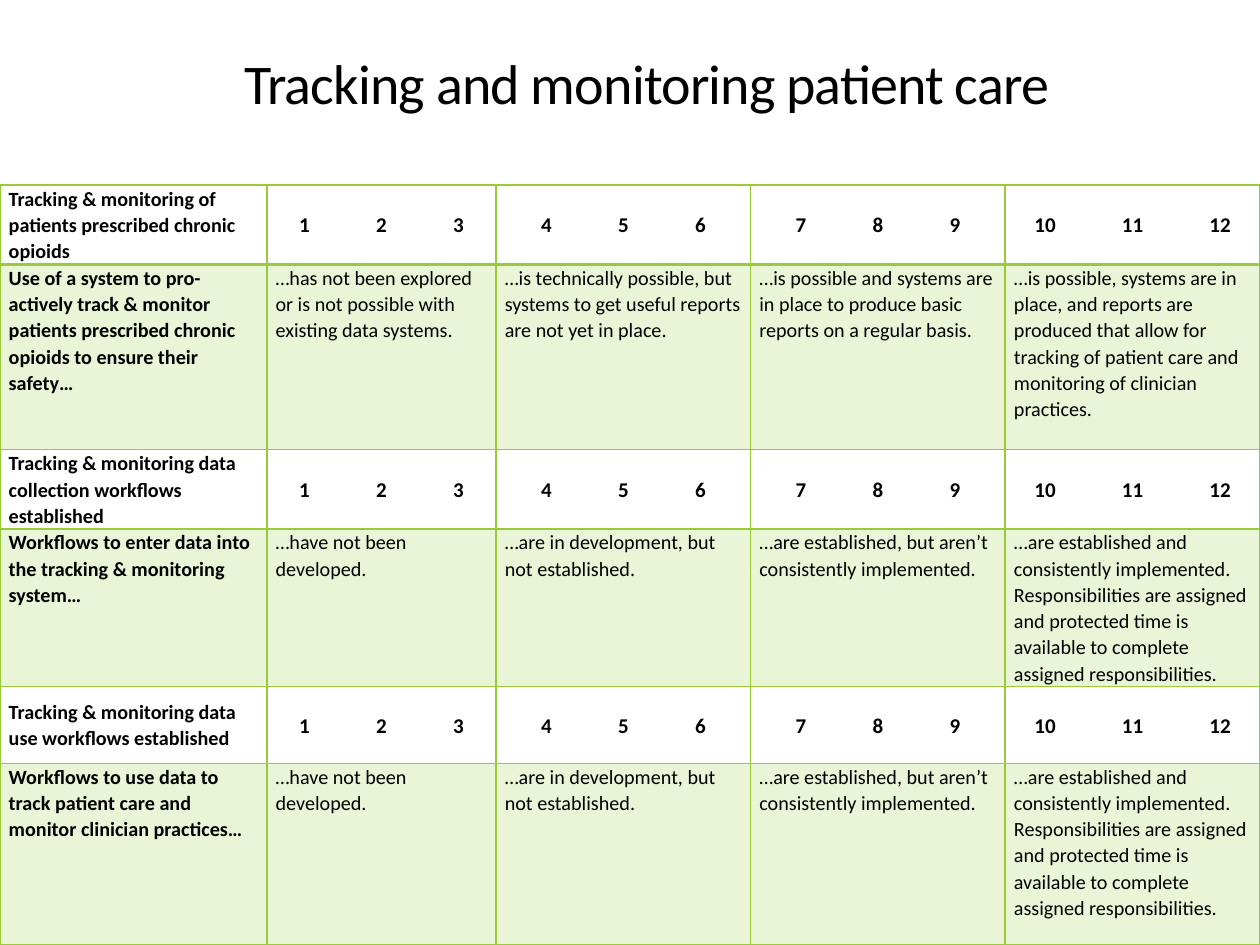
"""Build a slide with a scoring table for tracking and monitoring patient care."""
from lxml.etree import SubElement
from pptx import Presentation
from pptx.dml.color import RGBColor
from pptx.enum.text import MSO_ANCHOR as Anchor, PP_ALIGN as Align
from pptx.oxml.ns import qn
from pptx.util import Pt

BLACK = RGBColor(0x00, 0x00, 0x00)
GREEN = RGBColor(0x99, 0xCB, 0x38)
FONT = "Calibri"

TITLE = "Tracking and monitoring patient care"
WORKFLOW_LEVELS = [
    "…have not been developed.",
    "…are in development, but not established.",
    "…are established, but aren’t consistently implemented.",
    "…are established and consistently implemented. Responsibilities are assigned "
    "and protected time is available to complete assigned responsibilities.",
]
TOPICS = [
    ("Tracking & monitoring of patients prescribed chronic opioids",
     "Use of a system to pro-actively track & monitor patients prescribed chronic "
     "opioids to ensure their safety…",
     ["…has not been explored or is not possible with existing data systems.",
      "…is technically possible, but systems to get useful reports are not yet in place.",
      "…is possible and systems are in place to produce basic reports on a regular basis.",
      "…is possible, systems are in place, and reports are produced that allow for "
      "tracking of patient care and monitoring of clinician practices."]),
    ("Tracking & monitoring data collection workflows established",
     "Workflows to enter data into the tracking & monitoring system…",
     WORKFLOW_LEVELS),
    ("Tracking & monitoring data use workflows established",
     "Workflows to use data to track patient care and monitor clinician practices…",
     WORKFLOW_LEVELS),
]
SCORES = [(1, 2, 3), (4, 5, 6), (7, 8, 9), (10, 11, 12)]
SCORE_GAPS = [44, 44, 44, 50]
COLUMN_WIDTHS = [152.5, 131, 145.5, 145.5, 145.5]
ROW_HEIGHTS = [45.4, 105.8, 45.4, 90, 43.9, 103.7]
TABLE_TOP = 105.8
INSET = 5


def format_font(span, **values):
    span.font.color.rgb = BLACK
    for name, value in {"name": FONT, **values}.items():
        setattr(span.font, name, value)


def add_borders(cell, widths):
    properties = cell._tc.get_or_add_tcPr()
    for side, width in widths.items():
        line = SubElement(properties, qn(f"a:ln{side}"), w=str(Pt(width)))
        fill = SubElement(line, qn("a:solidFill"))
        SubElement(fill, qn("a:srgbClr"), val=str(GREEN))


def add_score_tabs(para, column):
    center = COLUMN_WIDTHS[column] / 2 - INSET
    gap = SCORE_GAPS[column - 1]
    tabs = SubElement(para._p.get_or_add_pPr(), qn("a:tabLst"))
    for position in (center - gap, center, center + gap):
        SubElement(tabs, qn("a:tab"), pos=str(Pt(position)), algn="ctr")


def fill_cell(cell, row, column, text):
    is_header = row % 2 == 0
    is_score = is_header and column > 0
    add_borders(cell, {"L": 1, "R": 1, "T": 2 if row == 1 else 1, "B": 2 if row == 0 else 1})
    if is_header:
        cell.fill.background()
    else:
        cell.fill.solid()
        cell.fill.fore_color.rgb = GREEN
        color = cell._tc.tcPr.find(f"{qn('a:solidFill')}/{qn('a:srgbClr')}")
        SubElement(color, qn("a:alpha"), val="20000")
    layout = {"margin_left": Pt(INSET), "margin_right": Pt(INSET), "margin_top": 0,
              "margin_bottom": 0,
              "vertical_anchor": Anchor.MIDDLE if is_header else Anchor.TOP}
    for name, value in layout.items():
        setattr(cell, name, value)
    para = cell.text_frame.paragraphs[0]
    if is_score:
        add_score_tabs(para, column)
    for name, value in {"alignment": Align.LEFT, "line_spacing": 1.07,
                        "space_after": Pt(3)}.items():
        setattr(para, name, value)
    span = para.add_run()
    span.text = text
    format_font(span, size=Pt(12 if is_score else 11.5), bold=is_header or column == 0)


def add_title(page):
    box = page.shapes.title
    box.left, box.top, box.width, box.height = Pt(132.5), Pt(8.6), Pt(556.5), Pt(61.2)
    box.text_frame.vertical_anchor = Anchor.BOTTOM
    box.text_frame.word_wrap = True
    para = box.text_frame.paragraphs[0]
    para.alignment = Align.LEFT
    para.line_spacing = 0.85
    span = para.add_run()
    span.text = TITLE
    format_font(span, size=Pt(32))
    span.font._element.set("spc", "-50")


def add_score_table(page):
    rows = []
    for heading, question, levels in TOPICS:
        rows.append([heading] + ["".join(f"\t{score}" for score in group) for group in SCORES])
        rows.append([question] + levels)
    frame = page.shapes.add_table(len(rows), len(COLUMN_WIDTHS), 0, Pt(TABLE_TOP),
                                  Pt(sum(COLUMN_WIDTHS)), Pt(sum(ROW_HEIGHTS)))
    table = frame.table
    table.first_row = table.horz_banding = False
    for column, width in zip(table.columns, COLUMN_WIDTHS):
        column.width = Pt(width)
    for row, height in zip(table.rows, ROW_HEIGHTS):
        row.height = Pt(height)
    for row, texts in enumerate(rows):
        for column, text in enumerate(texts):
            fill_cell(table.cell(row, column), row, column, text)


def main():
    deck = Presentation()
    deck.slide_width, deck.slide_height = Pt(720), Pt(540)
    page = deck.slides.add_slide(deck.slide_layouts[5])
    add_title(page)
    add_score_table(page)
    deck.save("out.pptx")


if __name__ == "__main__":
    main()
